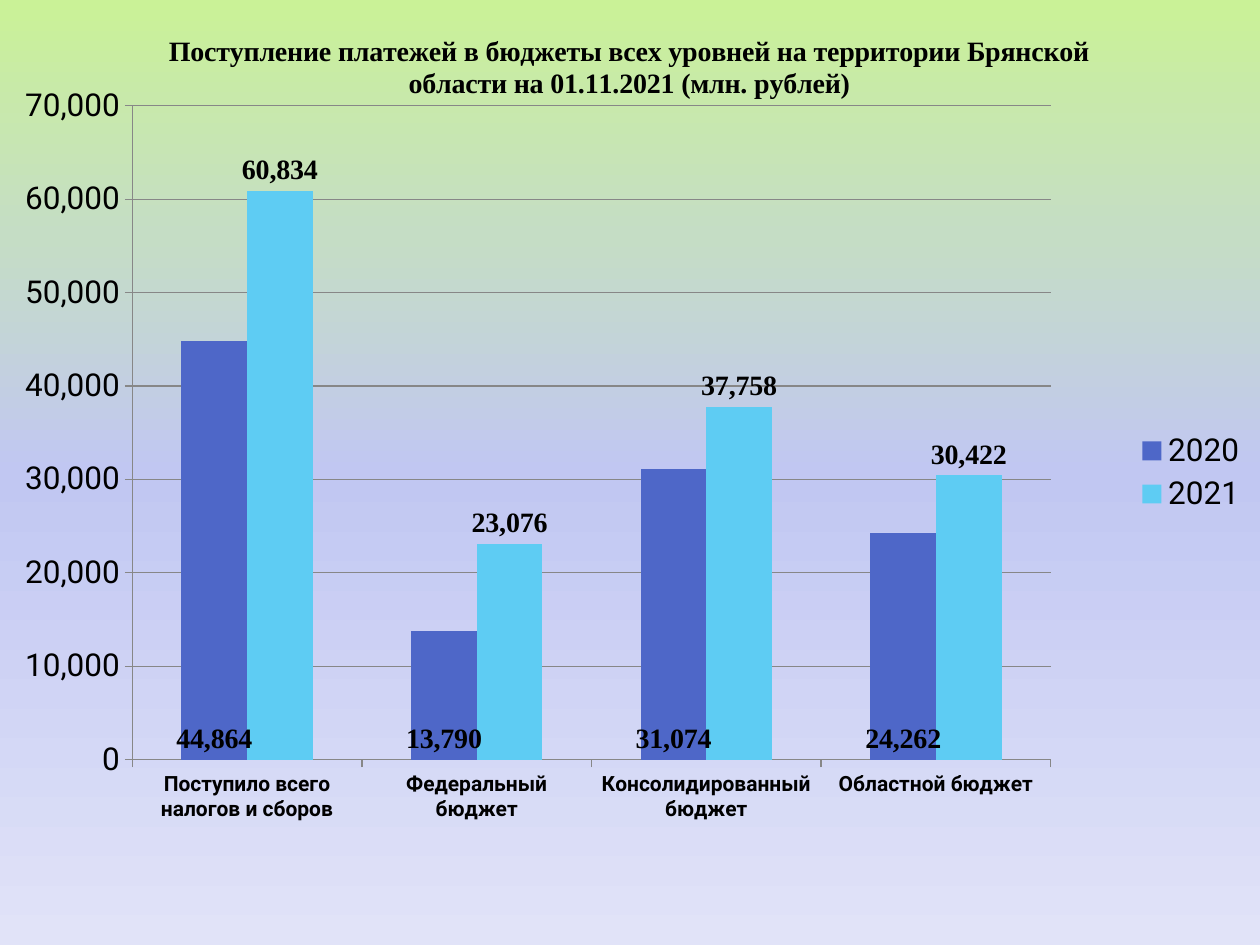
from lxml.etree import SubElement
from pptx import Presentation
from pptx.chart.data import CategoryChartData
from pptx.dml.color import RGBColor
from pptx.enum.chart import XL_CHART_TYPE, XL_LABEL_POSITION, XL_LEGEND_POSITION, XL_TICK_MARK
from pptx.oxml import parse_xml
from pptx.oxml.ns import nsdecls, qn
from pptx.util import Inches, Pt

BLACK = RGBColor(0x00, 0x00, 0x00)
GRAY = RGBColor(0x87, 0x87, 0x87)
BLUE = RGBColor(0x4E, 0x67, 0xC8)
SKY = RGBColor(0x5E, 0xCC, 0xF3)
# Gradient stops, from top to bottom: percent and colour
BACKDROP = [
    (0, RGBColor(0xCA, 0xF2, 0x97)),
    (25, RGBColor(0xC5, 0xDD, 0xC5)),
    (50, RGBColor(0xC1, 0xC7, 0xF2)),
    (100, RGBColor(0xE1, 0xE3, 0xF8)),
]

TITLE = ("Поступление платежей в бюджеты всех уровней на территории "
         "Брянской области на 01.11.2021 (млн. рублей)")
BUDGETS = ["Поступило всего налогов и сборов", "Федеральный бюджет",
           "Консолидированный бюджет", "Областной бюджет"]
YEARS = [
    ("2020", [44864, 13790, 31074, 24262], BLUE, XL_LABEL_POSITION.INSIDE_BASE),
    ("2021", [60834, 23076, 37758, 30422], SKY, XL_LABEL_POSITION.OUTSIDE_END),
]
NUMBER_FORMAT = "#,##0"


class SlideBuilder:
    """Holds the chart style and the current slide."""

    body_font = "Roboto"
    accent_font = "Times New Roman"

    def __init__(self, page):
        self.page = page

    def style(self, font, size, bold=False, name=None):
        font.name = name or self.body_font
        font.size = Pt(size)
        font.bold = bold
        font.color.rgb = BLACK

    def column_chart(self, left, top, width, height):
        data = CategoryChartData(number_format=NUMBER_FORMAT)
        data.categories = BUDGETS
        for year, values, _, _ in YEARS:
            data.add_series(year, values)
        frame = self.page.shapes.add_chart(
            XL_CHART_TYPE.COLUMN_CLUSTERED, left, top, width, height, data)
        chart = frame.chart
        self.style(chart.font, 18)
        chart.has_legend = True
        chart.legend.position = XL_LEGEND_POSITION.RIGHT
        chart.legend.include_in_layout = False
        return chart

    def title(self, chart, text):
        chart.has_title = True
        para = chart.chart_title.text_frame.paragraphs[0]
        span = para.add_run()
        span.text = text
        self.style(span.font, 16, True, self.accent_font)

    def axis(self, axis, size, bold=False):
        axis.major_tick_mark = XL_TICK_MARK.OUTSIDE
        axis.minor_tick_mark = XL_TICK_MARK.NONE
        axis.format.line.color.rgb = GRAY
        axis.format.line.width = Pt(0.75)
        self.style(axis.tick_labels.font, size, bold)

    def series(self, series, color, position):
        series.format.fill.solid()
        series.format.fill.fore_color.rgb = color
        labels = series.data_labels
        labels.show_value = True
        labels.position = position
        labels.number_format = NUMBER_FORMAT
        labels.number_format_is_linked = False
        self.style(labels.font, 16, True, self.accent_font)

    def layout(self, parent, index, **settings):
        """Place a chart part by fractions of the chart area."""
        for old in parent.findall(qn("c:layout")):
            parent.remove(old)
        layout = parse_xml(f"<c:layout {nsdecls('c')}><c:manualLayout/></c:layout>")
        for tag, value in settings.items():
            SubElement(layout[0], qn(f"c:{tag}")).set("val", str(value))
        parent.insert(index, layout)

    def backdrop(self, chart, stops):
        """Fill the chart area with a vertical gradient."""
        marks = "".join(
            f'<a:gs pos="{percent * 1000}"><a:srgbClr val="{color}"/></a:gs>'
            for percent, color in stops)
        area = parse_xml(
            f"<c:spPr {nsdecls('c', 'a')}><a:gradFill><a:gsLst>{marks}</a:gsLst>"
            '<a:lin ang="5400000" scaled="0"/></a:gradFill>'
            "<a:ln><a:noFill/></a:ln></c:spPr>")
        chart.element.find(qn("c:chart")).addnext(area)


def main():
    deck = Presentation()
    deck.slide_width, deck.slide_height = Inches(10), Inches(7.5)
    page = deck.slides.add_slide(deck.slide_layouts[6])
    builder = SlideBuilder(page)

    # Chart, filling the whole slide
    chart = builder.column_chart(0, 0, Inches(10), Inches(7.5))
    builder.backdrop(chart, BACKDROP)
    builder.title(chart, TITLE)

    # Axes
    builder.axis(chart.category_axis, 12, True)
    values = chart.value_axis
    builder.axis(values, 18)
    values.minimum_scale, values.maximum_scale, values.major_unit = 0, 70000, 10000
    values.tick_labels.number_format = NUMBER_FORMAT
    values.tick_labels.number_format_is_linked = False
    values.has_major_gridlines = True
    values.major_gridlines.format.line.color.rgb = GRAY
    values.major_gridlines.format.line.width = Pt(0.75)

    # Columns
    plot = chart.plots[0]
    plot.gap_width, plot.overlap = 150, 0
    plot.vary_by_categories = False
    for series, (_, _, color, position) in zip(plot.series, YEARS):
        builder.series(series, color, position)

    # Positions of the title and the plot
    area = chart.element.find(qn("c:chart"))
    builder.layout(area.find(qn("c:title")), 1,
                   xMode="edge", yMode="edge", x=0.13, y=0.03)
    builder.layout(area.find(qn("c:plotArea")), 0,
                   layoutTarget="inner", xMode="edge", yMode="edge",
                   x=0.105, y=0.112, w=0.729, h=0.692)

    deck.save("out.pptx")


if __name__ == "__main__":
    main()
